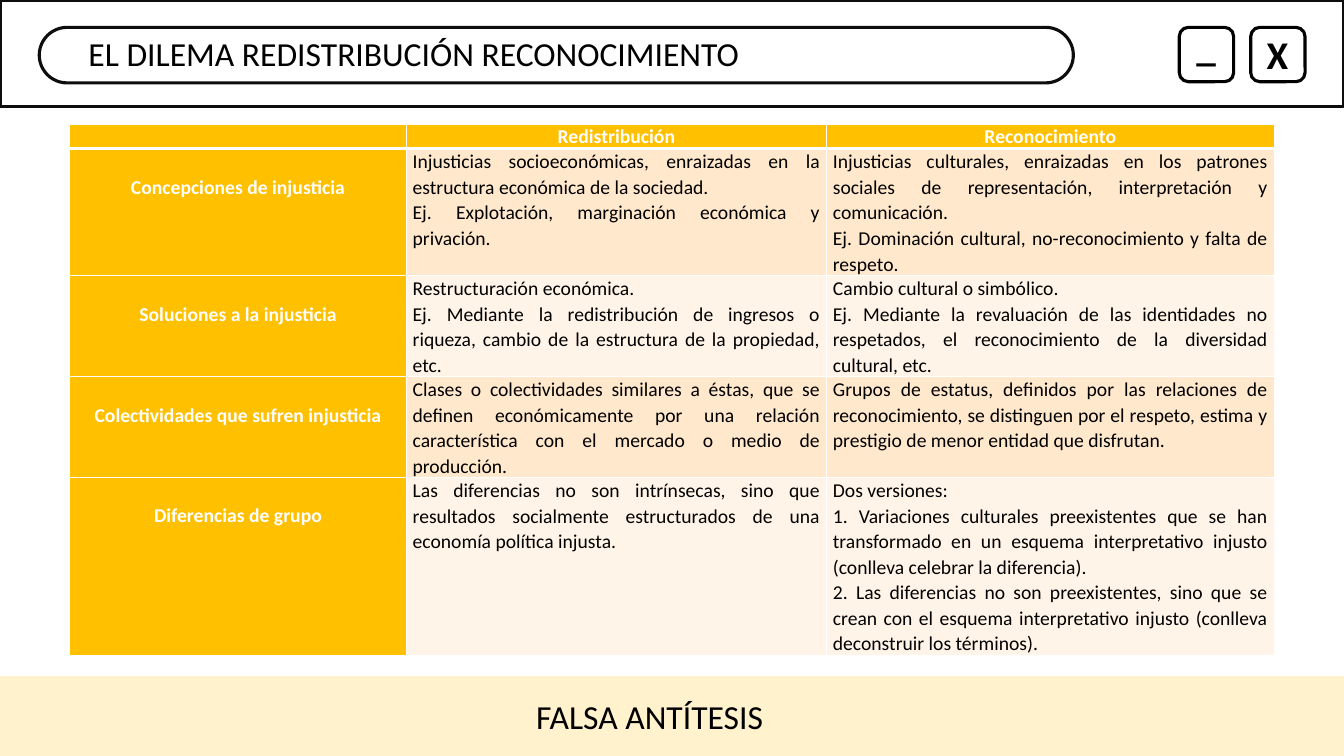
from lxml.etree import SubElement
from pptx import Presentation
from pptx.dml.color import RGBColor
from pptx.enum.shapes import MSO_SHAPE
from pptx.enum.text import PP_ALIGN
from pptx.oxml.ns import qn
from pptx.util import Cm, Pt

WHITE = RGBColor(0xFF, 0xFF, 0xFF)
BLACK = RGBColor(0x00, 0x00, 0x00)
INK = RGBColor(0x0D, 0x0D, 0x0D)
AMBER = RGBColor(0xFF, 0xC0, 0x00)
PEACH = RGBColor(0xFF, 0xE8, 0xCC)
PALE_PEACH = RGBColor(0xFF, 0xF4, 0xE7)
CREAM = RGBColor(0xFF, 0xF2, 0xCC)

FONT = "Calibri"
SLIDE_WIDTH, SLIDE_HEIGHT = Cm(33.87), Cm(19.05)
COLUMN_WIDTHS = (8.48, 10.59, 11.28)
ROW_HEIGHTS = (0.61, 3.2, 2.54, 2.54, 4.5)
LABEL_DROP = Cm(0.64)  # one text line above each row label

COMPARISON = [
    ("", "Redistribución", "Reconocimiento"),
    ("Concepciones de injusticia",
     "Injusticias socioeconómicas, enraizadas en la estructura económica de la sociedad.\n"
     "Ej. Explotación, marginación económica y privación.",
     "Injusticias culturales, enraizadas en los patrones sociales de representación, "
     "interpretación y comunicación.\n"
     "Ej. Dominación cultural, no-reconocimiento y falta de respeto."),
    ("Soluciones a la injusticia",
     "Restructuración económica.\n"
     "Ej. Mediante la redistribución de ingresos o riqueza, cambio de la estructura "
     "de la propiedad, etc.",
     "Cambio cultural o simbólico.\n"
     "Ej. Mediante la revaluación de las identidades no respetados, el reconocimiento "
     "de la diversidad cultural, etc."),
    ("Colectividades que sufren injusticia",
     "Clases o colectividades similares a éstas, que se definen económicamente por una "
     "relación característica con el mercado o medio de producción.",
     "Grupos de estatus, definidos por las relaciones de reconocimiento, se distinguen "
     "por el respeto, estima y prestigio de menor entidad que disfrutan."),
    ("Diferencias de grupo",
     "Las diferencias no son intrínsecas, sino que resultados socialmente estructurados "
     "de una economía política injusta.",
     "Dos versiones:\n"
     "1. Variaciones culturales preexistentes que se han transformado en un esquema "
     "interpretativo injusto (conlleva celebrar la diferencia).\n"
     "2. Las diferencias no son preexistentes, sino que se crean con el esquema "
     "interpretativo injusto (conlleva deconstruir los términos)."),
]


def style_run(run, size, color, bold=False):
    run.font.name = FONT
    run.font.size = Pt(size)
    run.font.bold = bold
    run.font.color.rgb = color


def add_panel(slide, kind, left, top, width, height, fill, line=None):
    panel = slide.shapes.add_shape(kind, left, top, width, height)
    panel.shadow.inherit = False
    panel.fill.solid()
    panel.fill.fore_color.rgb = fill
    if line is None:
        panel.line.fill.background()
    else:
        panel.line.color.rgb = line
        panel.line.width = Pt(2.25)
    return panel


def add_label(slide, text, left, top, width, height, size, bold=False):
    label = slide.shapes.add_textbox(left, top, width, height)
    label.text_frame.word_wrap = True
    label.text_frame.text = text
    style_run(label.text_frame.paragraphs[0].runs[0], size, BLACK, bold)


def set_borders(cell, top, bottom):
    properties = cell._tc.get_or_add_tcPr()
    for side, points in (("L", 1), ("R", 1), ("T", top), ("B", bottom)):
        border = SubElement(properties, qn(f"a:ln{side}"), w=str(Pt(points)))
        fill = SubElement(border, qn("a:solidFill"))
        SubElement(fill, qn("a:srgbClr"), val=str(WHITE))


def fill_cell(cell, text, row, column):
    heading = row == 0 or column == 0
    set_borders(cell, top=3 if row <= 1 else 1, bottom=3 if row == 0 else 1)
    cell.fill.solid()
    cell.fill.fore_color.rgb = AMBER if heading else (PEACH if row % 2 else PALE_PEACH)
    cell.margin_left = cell.margin_right = Cm(0.16)
    cell.margin_top = LABEL_DROP if row and column == 0 else 0
    cell.margin_bottom = 0
    cell.text_frame.text = text
    for paragraph in cell.text_frame.paragraphs:
        paragraph.alignment = PP_ALIGN.CENTER if heading else PP_ALIGN.JUSTIFY
        paragraph.line_spacing = 1.07
        for run in paragraph.runs:
            style_run(run, 14, WHITE if heading else BLACK, heading)
        if not paragraph.runs:  # keeps the empty corner as low as its row
            SubElement(paragraph._p, qn("a:endParaRPr"), sz="1400")


def add_comparison(slide):
    table = slide.shapes.add_table(
        len(ROW_HEIGHTS), len(COLUMN_WIDTHS), Cm(1.76), Cm(3.11),
        Cm(sum(COLUMN_WIDTHS)), Cm(sum(ROW_HEIGHTS))).table
    for column, width in zip(table.columns, COLUMN_WIDTHS):
        column.width = Cm(width)
    for row, height in zip(table.rows, ROW_HEIGHTS):
        row.height = Cm(height)
    for row, texts in enumerate(COMPARISON):
        for column, text in enumerate(texts):
            fill_cell(table.cell(row, column), text, row, column)


def main():
    presentation = Presentation()
    presentation.slide_width, presentation.slide_height = SLIDE_WIDTH, SLIDE_HEIGHT
    slide = presentation.slides.add_slide(presentation.slide_layouts[6])

    # Window bar with its two buttons
    add_panel(slide, MSO_SHAPE.RECTANGLE, 0, 0, SLIDE_WIDTH, Cm(2.69), WHITE, INK)
    for button_left in (31.52, 29.72):
        add_panel(slide, MSO_SHAPE.ROUNDED_RECTANGLE, Cm(button_left), Cm(0.69),
                  Cm(1.37), Cm(1.37), WHITE, BLACK)
    add_label(slide, "X", Cm(31.67), Cm(0.64), Cm(1.57), Cm(1.45), 28, True)
    add_label(slide, "_", Cm(29.9), Cm(0.43), Cm(1.09), Cm(1.45), 28, True)

    # Title
    title_pill = add_panel(slide, MSO_SHAPE.ROUNDED_RECTANGLE, Cm(0.99), Cm(0.69),
                           Cm(26.06), Cm(1.4), WHITE, INK)
    title_pill.adjustments[0] = 0.5
    add_label(slide, "EL DILEMA REDISTRIBUCIÓN RECONOCIMIENTO",
              Cm(1.98), Cm(0.71), Cm(22.81), Cm(1.27), 24)

    # Comparison table
    add_comparison(slide)

    # Conclusion band
    add_panel(slide, MSO_SHAPE.RECTANGLE, 0, Cm(17.04), SLIDE_WIDTH, Cm(2.01), CREAM)
    add_label(slide, "FALSA ANTÍTESIS", Cm(13.26), Cm(17.4), Cm(6.3), Cm(1.27), 24)

    presentation.save("out.pptx")


if __name__ == "__main__":
    main()
